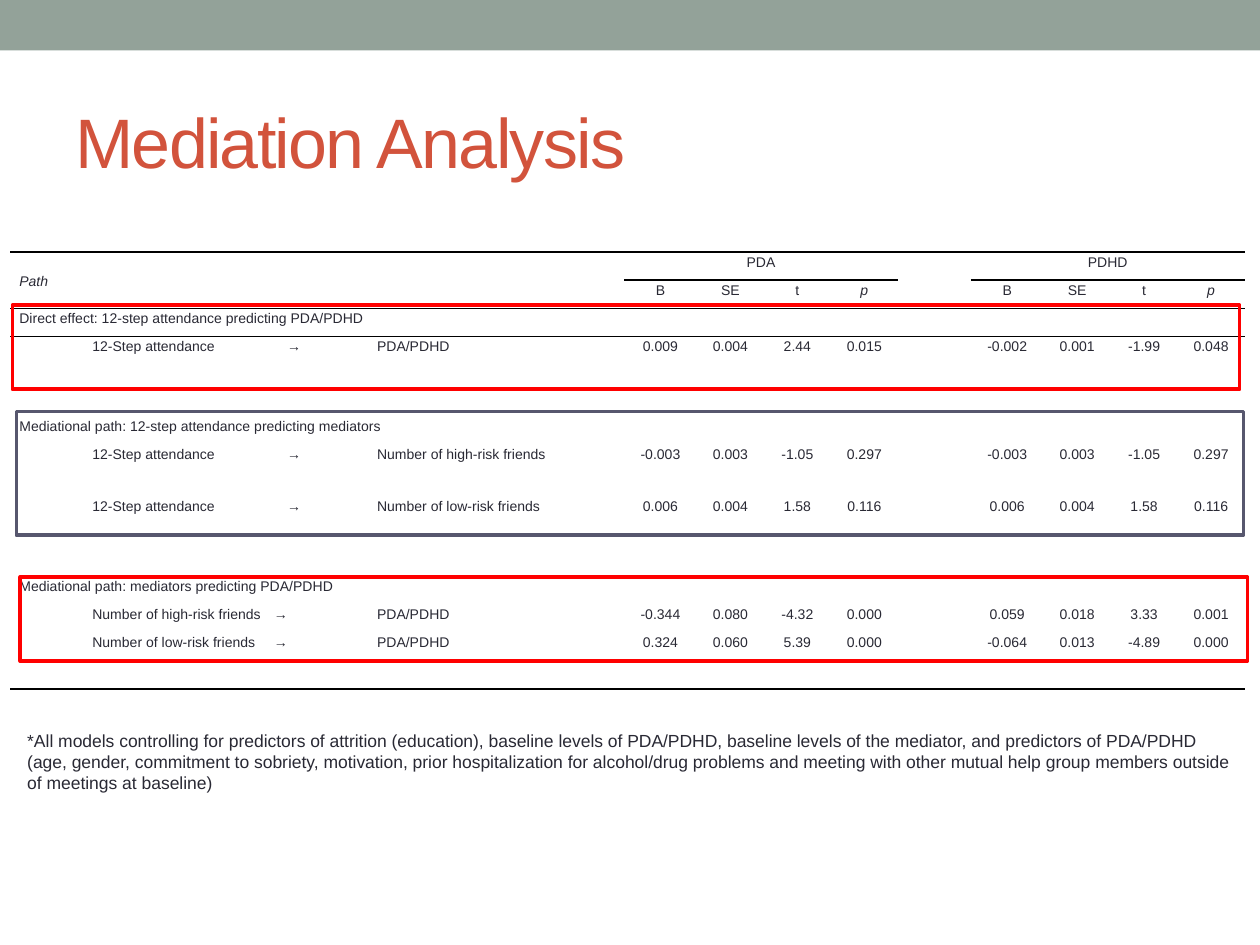
from pptx import Presentation
from pptx.dml.color import RGBColor
from pptx.enum.shapes import MSO_SHAPE
from pptx.enum.text import MSO_ANCHOR, PP_ALIGN
from pptx.oxml.ns import qn
from pptx.util import Cm, Pt
from lxml.etree import SubElement

SAGE = RGBColor(0x93, 0xA2, 0x99)
RUST = RGBColor(0xD2, 0x53, 0x3C)
INK = RGBColor(0x29, 0x29, 0x34)
RED = RGBColor(0xFF, 0x00, 0x00)
SLATE = RGBColor(0x57, 0x57, 0x6E)
BLACK = RGBColor(0x00, 0x00, 0x00)
FONT = "Arial"
PLAIN_TABLE_STYLE = "{2D5ABB26-0587-4C30-8999-92F81FD0307C}"

WIDE, NARROW = 1.47, 1.35
COLUMN_WIDTHS = [1.47, 5.74, 5.16] + [WIDE] + [NARROW] * 3 + [WIDE] + [WIDE] + [NARROW] * 3
ROW_HEIGHT, TALL_ROW_HEIGHT = 0.57, 1.04
TALL_ROWS = (3, 6, 7)
SECTION_ROWS = (2, 5, 9)
SPACER_ROWS = (4, 8, 12)
LAST_ROW = 12
GAP_COLUMN = 7
FIRST_STATISTICS = (3, 8)
STATISTICS = ["B", "SE", "t", "p"]
ATTENDANCE_TAB, FRIENDS_TAB = 3.93, 3.66

SECTIONS = [
    ("Direct effect: 12-step attendance predicting PDA/PDHD", ATTENDANCE_TAB, [
        ("12-Step attendance", "PDA/PDHD", "0.009 0.004 2.44 0.015", "-0.002 0.001 -1.99 0.048"),
    ]),
    ("Mediational path: 12-step attendance predicting mediators", ATTENDANCE_TAB, [
        ("12-Step attendance", "Number of high-risk friends",
         "-0.003 0.003 -1.05 0.297", "-0.003 0.003 -1.05 0.297"),
        ("12-Step attendance", "Number of low-risk friends",
         "0.006 0.004 1.58 0.116", "0.006 0.004 1.58 0.116"),
    ]),
    ("Mediational path: mediators predicting PDA/PDHD", FRIENDS_TAB, [
        ("Number of high-risk friends", "PDA/PDHD",
         "-0.344 0.080 -4.32 0.000", "0.059 0.018 3.33 0.001"),
        ("Number of low-risk friends", "PDA/PDHD",
         "0.324 0.060 5.39 0.000", "-0.064 0.013 -4.89 0.000"),
    ]),
]
FOOTNOTE = (
    "*All models controlling for predictors of attrition (education), baseline levels of PDA/PDHD, "
    "baseline levels of the mediator, and predictors of PDA/PDHD (age, gender, commitment to sobriety, "
    "motivation, prior hospitalization for alcohol/drug problems and meeting with other mutual help "
    "group members outside of meetings at baseline)"
)


def set_font(paragraph, size, color, italic=False):
    font = paragraph.font
    font.name, font.size, font.italic = FONT, Pt(size), italic
    font.color.rgb = color


def add_text(slide, text, left, top, width, height, size, color, anchor=MSO_ANCHOR.TOP):
    shape = slide.shapes.add_textbox(Cm(left), Cm(top), Cm(width), Cm(height))
    frame = shape.text_frame
    frame.word_wrap = True
    frame.vertical_anchor = anchor
    paragraph = frame.paragraphs[0]
    paragraph.text = text
    set_font(paragraph, size, color)
    return paragraph


def add_rectangle(slide, left, top, width, height, fill=None, line=None):
    shape = slide.shapes.add_shape(MSO_SHAPE.RECTANGLE, Cm(left), Cm(top), Cm(width), Cm(height))
    shape.shadow.inherit = False
    if fill is None:
        shape.fill.background()
    else:
        shape.fill.solid()
        shape.fill.fore_color.rgb = fill
    if line is None:
        shape.line.fill.background()
    else:
        shape.line.color.rgb = line
        shape.line.width = Pt(2.08)


def add_border(cell, side):
    line = SubElement(cell._tc.get_or_add_tcPr(), qn(f"a:{side}"), w=str(Pt(1)))
    fill = SubElement(line, qn("a:solidFill"))
    SubElement(fill, qn("a:srgbClr"), val=str(BLACK))


def add_tab_stop(paragraph, position):
    tabs = SubElement(paragraph._p.get_or_add_pPr(), qn("a:tabLst"))
    SubElement(tabs, qn("a:tab"), pos=str(Cm(position)), algn="l")


def format_cell(cell, row, column, text, tab):
    cell.margin_left = cell.margin_right = Cm(0.18)
    cell.margin_top = cell.margin_bottom = 0
    if row in (0, 2):
        add_border(cell, "lnT")
    if row in (1, LAST_ROW) or (row == 0 and column != GAP_COLUMN):
        add_border(cell, "lnB")
    cell.fill.background()
    paragraph = cell.text_frame.paragraphs[0]
    paragraph.text = text
    paragraph.line_spacing = 1.15
    if column >= FIRST_STATISTICS[0]:
        paragraph.alignment = PP_ALIGN.CENTER
    if "\t" in text:
        add_tab_stop(paragraph, tab)
    set_font(paragraph, 8, INK, text in ("Path", "p"))
    if not text:
        paragraph._p.get_or_add_endParaRPr().set("sz", "800")


def collect_cells():
    texts, tabs = {(0, 0): "Path"}, {}
    for first, outcome in zip(FIRST_STATISTICS, ("PDA", "PDHD")):
        texts[0, first] = outcome
        for offset, name in enumerate(STATISTICS):
            texts[1, first + offset] = name
    for start, (heading, tab, paths) in zip(SECTION_ROWS, SECTIONS):
        texts[start, 0] = heading
        for row, (source, target, *estimates) in enumerate(paths, start + 1):
            texts[row, 1] = f"{source}\t→"
            texts[row, 2] = target
            tabs[row] = tab
            for first, values in zip(FIRST_STATISTICS, estimates):
                for offset, value in enumerate(values.split()):
                    texts[row, first + offset] = value
    return texts, tabs


def merge_cells(table):
    table.cell(0, 0).merge(table.cell(1, 1))
    table.cell(0, 2).merge(table.cell(1, 2))
    for first in FIRST_STATISTICS:
        table.cell(0, first).merge(table.cell(0, first + 3))
    for row in SECTION_ROWS:
        table.cell(row, 0).merge(table.cell(row, 2))
    for row in SPACER_ROWS:
        table.cell(row, 0).merge(table.cell(row, 1))


def add_results_table(slide):
    heights = [TALL_ROW_HEIGHT if row in TALL_ROWS else ROW_HEIGHT for row in range(LAST_ROW + 1)]
    table = slide.shapes.add_table(
        len(heights), len(COLUMN_WIDTHS), Cm(0.21), Cm(5.08),
        Cm(sum(COLUMN_WIDTHS)), Cm(sum(heights))).table
    table.first_row = table.horz_banding = False
    table._tbl.tblPr.find(qn("a:tableStyleId")).text = PLAIN_TABLE_STYLE
    for column, width in zip(table.columns, COLUMN_WIDTHS):
        column.width = Cm(width)
    for row, height in zip(table.rows, heights):
        row.height = Cm(height)
    merge_cells(table)
    texts, tabs = collect_cells()
    for row in range(len(heights)):
        for column in range(len(COLUMN_WIDTHS)):
            format_cell(table.cell(row, column), row, column, texts.get((row, column), ""), tabs.get(row))
    table.cell(0, 0).vertical_anchor = MSO_ANCHOR.MIDDLE


def main():
    presentation = Presentation()
    presentation.slide_width, presentation.slide_height = Cm(25.4), Cm(19.05)
    slide = presentation.slides.add_slide(presentation.slide_layouts[6])
    add_rectangle(slide, 0, 0, 25.4, 1.02, fill=SAGE)
    title = add_text(slide, "Mediation Analysis", 1.27, 1.47, 22.86, 2.74, 40, RUST, MSO_ANCHOR.MIDDLE)
    title.runs[0]._r.get_or_add_rPr().set("spc", "-100")
    add_results_table(slide)
    add_text(slide, FOOTNOTE, 0.3, 14.6, 24.87, 1.96, 10, INK)
    for left, top, height, color in [
        (0.25, 6.15, 1.7, RED), (0.33, 8.3, 2.49, SLATE), (0.41, 11.63, 1.7, RED),
    ]:
        add_rectangle(slide, left, top, 24.74, height, line=color)
    presentation.save("out.pptx")


if __name__ == "__main__":
    main()
